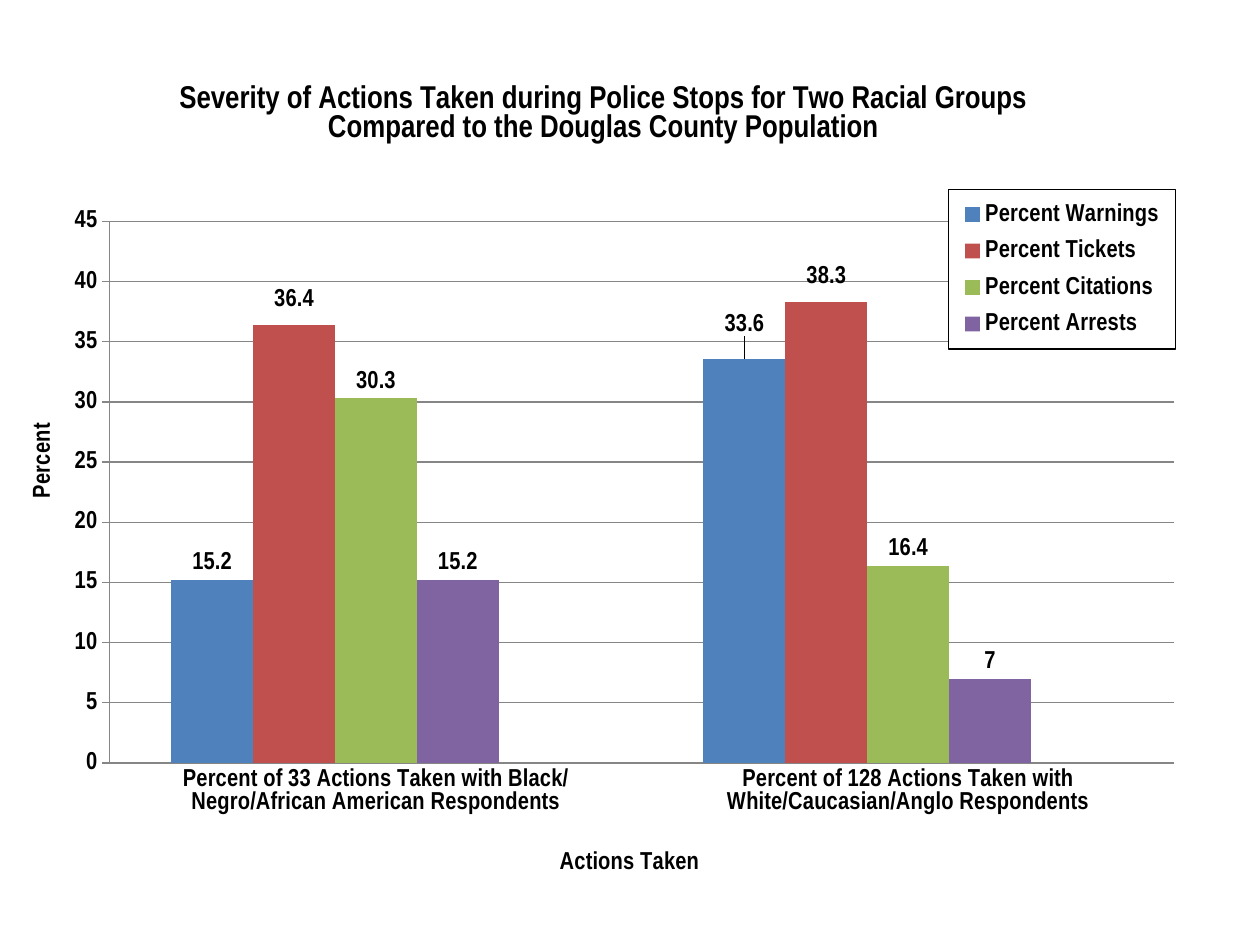
from lxml.etree import SubElement as Sub
from pptx import Presentation
from pptx.chart.data import CategoryChartData as Data
from pptx.dml.color import RGBColor
from pptx.enum.chart import XL_CHART_TYPE as Kind
from pptx.enum.chart import XL_LABEL_POSITION as Spot
from pptx.enum.chart import XL_LEGEND_POSITION as Side
from pptx.enum.chart import XL_TICK_MARK as Tick
from pptx.oxml import parse_xml
from pptx.oxml.ns import nsdecls, qn
from pptx.util import Inches, Pt

TITLE = ("Severity of Actions Taken during Police Stops for Two Racial Groups "
         "Compared to the Douglas County Population")
GROUPS = ["Percent of 33 Actions Taken with Black/Negro/African American Respondents",
          "Percent of 128 Actions Taken with White/Caucasian/Anglo Respondents"]
# The empty last series keeps the gap at the right of each group.
SERIES = [("Percent Warnings", (15.2, 33.6), "4F81BD"),
          ("Percent Tickets", (36.4, 38.3), "C0504D"),
          ("Percent Citations", (30.3, 16.4), "9BBB59"),
          ("Percent Arrests", (15.2, 7), "8064A2"),
          ("Series 5", (None, None), "4BACC6")]
# (series, group): upward shift of the label, as a share of the chart
LIFTS = {(0, 1): -0.02, (1, 0): -0.01, (1, 1): -0.01}


def color(code):
    return RGBColor.from_string(code)


def apply(item, **values):
    for name, value in values.items():
        setattr(item, name, value)


def place(node, index, x, y, w=None, h=None, mode="edge", inner=False):
    """Give a chart part a manual layout, in shares of the chart."""
    for old in node.findall(qn("c:layout")):
        node.remove(old)
    layout = parse_xml(f"<c:layout {nsdecls('c')}/>")
    manual = Sub(layout, qn("c:manualLayout"))
    marks = {"layoutTarget": "inner" if inner else None,
             "xMode": mode, "yMode": mode, "x": x, "y": y, "w": w, "h": h}
    for tag, value in marks.items():
        if value is not None:
            Sub(manual, qn("c:" + tag)).set("val", str(value))
    node.insert(index, layout)


class Deck:
    ink, grid, paper = "000000", "868686", "FFFFFF"
    font, size, big = "Arial Narrow", 14, 18

    def __init__(self, wide=10, high=7.5):
        self.show = Presentation()
        apply(self.show, slide_width=Inches(wide), slide_height=Inches(high))
        self.slide = self.show.slides.add_slide(self.show.slide_layouts[6])

    def share(self, x, y, w, h):
        wide, high = self.show.slide_width, self.show.slide_height
        return int(x * wide), int(y * high), int(w * wide), int(h * high)

    def style(self, font, size=None):
        apply(font, name=self.font, size=Pt(size or self.size), bold=True)
        font.color.rgb = color(self.ink)

    def line(self, form):
        form.line.color.rgb = color(self.grid)
        form.line.width = Pt(0.75)

    def chart(self, box):
        data = Data()
        data.categories = GROUPS
        for name, values, _ in SERIES:
            data.add_series(name, values)
        frame = self.slide.shapes.add_chart(
            Kind.COLUMN_CLUSTERED, *self.share(*box), data)
        chart = frame.chart
        self.style(chart.font)
        place(chart.element.xpath(".//c:plotArea")[0], 0,
              0.091, 0.198, 0.882, 0.637, inner=True)
        return chart

    def title(self, owner, text, size=None, spot=None):
        owner.has_title = True
        part = owner.chart_title if hasattr(owner, "chart_title") else owner.axis_title
        run = part.text_frame.paragraphs[0].add_run()
        run.text = text
        self.style(run.font, size)
        if spot:
            place(part.format.line and part._element, 1, *spot)

    def axes(self, chart):
        cats, vals = chart.category_axis, chart.value_axis
        apply(cats, major_tick_mark=Tick.NONE, minor_tick_mark=Tick.NONE)
        apply(vals, major_tick_mark=Tick.CROSS, minor_tick_mark=Tick.NONE,
              minimum_scale=0, maximum_scale=45, major_unit=5,
              has_major_gridlines=True)
        for part in (cats, vals, vals.major_gridlines):
            self.line(part.format)
        cats.has_title = vals.has_title = True
        for axis, text, spot in ((cats, "Actions Taken", (0.46, 0.93)),
                                 (vals, "Percent", (0.02, 0.43))):
            self.title(axis, text, spot=spot)

    def bars(self, chart):
        plot = chart.plots[0]
        apply(plot, gap_width=150, overlap=0, vary_by_categories=False)
        for i, (series, (_, values, code)) in enumerate(zip(plot.series, SERIES)):
            series.format.fill.solid()
            series.format.fill.fore_color.rgb = color(code)
            if values[0] is None:
                continue
            labels = series.data_labels
            apply(labels, show_value=True, position=Spot.OUTSIDE_END)
            self.style(labels.font)
            for j in range(len(values)):
                if (i, j) in LIFTS:
                    series.points[j].data_label.position = Spot.OUTSIDE_END
                    node = series.points[j].data_label._get_or_add_dLbl()
                    place(node, 1, 0, LIFTS[i, j], mode="factor")

    def legend(self, chart):
        chart.has_legend = True
        key = chart.legend
        apply(key, position=Side.RIGHT, include_in_layout=True)
        self.style(key.font)
        node = chart.element.xpath(".//c:legend")[0]
        entry = parse_xml(
            f"<c:legendEntry {nsdecls('c')}><c:idx val='{len(SERIES) - 1}'/>"
            "<c:delete val='1'/></c:legendEntry>")
        node.insert(1, entry)
        place(node, 2, 0.786, 0.161, 0.188, 0.187)
        solid = "<a:solidFill><a:srgbClr val='{}'/></a:solidFill>"
        node.find(qn("c:overlay")).addnext(parse_xml(
            f"<c:spPr {nsdecls('c', 'a')}>{solid.format(self.paper)}"
            f"<a:ln w='{Pt(0.75)}'>{solid.format(self.ink)}</a:ln></c:spPr>"))


def main():
    deck = Deck()
    chart = deck.chart((0, 0.056, 0.958, 0.9))
    deck.title(chart, TITLE, deck.big)
    deck.axes(chart)
    deck.bars(chart)
    deck.legend(chart)
    deck.show.save("out.pptx")


if __name__ == "__main__":
    main()
